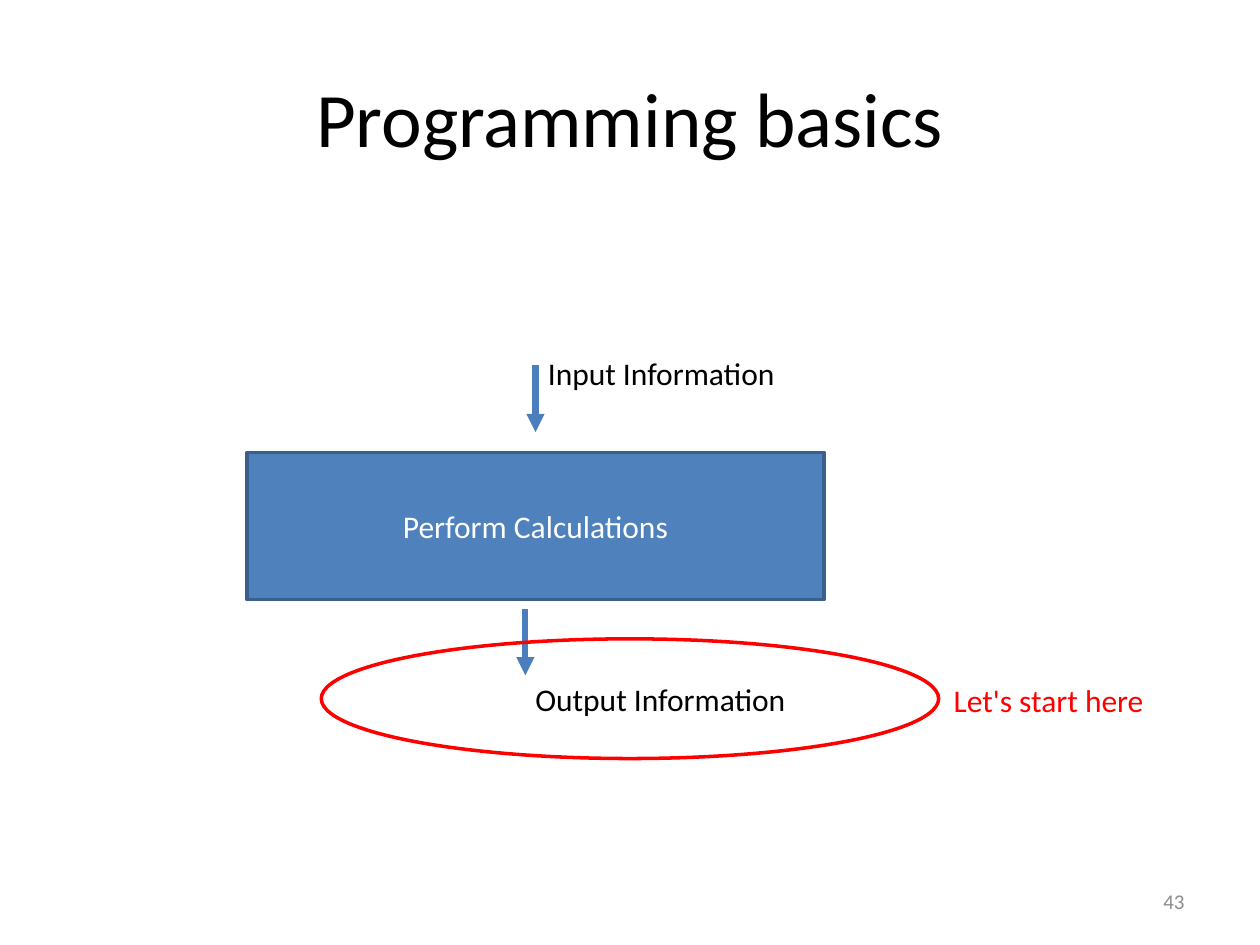
import pptx
import pptx.dml.color
import pptx.enum.shapes
import pptx.enum.text
import pptx.oxml
import pptx.oxml.ns
import pptx.util
from pptx.util import Inches

COLORS = {
    "black": "000000", "white": "FFFFFF", "gray": "8C8C8C", "red": "FF0000",
    "box": "4F81BD", "border": "3A5F8C", "arrow": "4B7EBC",
}
SHAPES = pptx.enum.shapes.MSO_SHAPE
ALIGN = pptx.enum.text.PP_ALIGN
ANCHOR = pptx.enum.text.MSO_ANCHOR


def color(name):
    return pptx.dml.color.RGBColor.from_string(COLORS[name])


def write(shape, text, size=18, ink="black", align=ALIGN.LEFT, anchor=ANCHOR.TOP):
    frame = shape.text_frame
    frame.word_wrap = True
    frame.vertical_anchor = anchor
    paragraph = frame.paragraphs[0]
    paragraph.alignment = align
    run = paragraph.add_run()
    run.text = text
    font_format = {"name": "Calibri", "size": pptx.util.Pt(size)}
    for attribute, value in font_format.items():
        setattr(run.font, attribute, value)
    run.font.color.rgb = color(ink)


def add_label(slide, left, top, width, height, text, **style):
    box = slide.shapes.add_textbox(*map(Inches, (left, top, width, height)))
    write(box, text, **style)


def add_outlined(shapes, kind, left, top, width, height, border):
    shape = shapes.add_shape(kind, *map(Inches, (left, top, width, height)))
    shape.shadow.inherit = False
    shape.line.color.rgb = color(border)
    shape.line.width = pptx.util.Pt(2)
    return shape


def add_down_arrow(slide, left, top, length):
    arrow = slide.shapes.add_connector(
        pptx.enum.shapes.MSO_CONNECTOR.STRAIGHT,
        *map(Inches, (left, top, left, top + length)))
    arrow.line.color.rgb = color("arrow")
    arrow.line.width = pptx.util.Pt(3.5)
    # Arrowhead and no shadow
    tail = pptx.oxml.parse_xml(
        f'<a:tailEnd {pptx.oxml.ns.nsdecls("a")} type="triangle"/>')
    arrow.line._get_or_add_ln().append(tail)
    effects = pptx.oxml.parse_xml(f'<a:effectLst {pptx.oxml.ns.nsdecls("a")}/>')
    arrow._element.spPr.append(effects)


def add_flow(slide, left, top, width, height):
    """Input arrow above the calculation box, output arrow below it."""
    add_down_arrow(slide, left + width / 2, top - 0.69, 0.53)
    add_label(slide, left + width / 2, top - 0.83, 3.58, 0.4, "Input Information")

    box = add_outlined(slide.shapes, SHAPES.RECTANGLE, left, top, width, height, "border")
    box.fill.solid()
    box.fill.fore_color.rgb = color("box")
    write(box, "Perform Calculations", ink="white",
          align=ALIGN.CENTER, anchor=ANCHOR.MIDDLE)

    bottom = top + height
    add_down_arrow(slide, left + 2.21, bottom + 0.07, 0.53)
    add_label(slide, left + 2.19, bottom + 0.59, 3.58, 0.4, "Output Information")


def add_callout(slide, left, top, width, height):
    """Red ring with its remark on the right."""
    group = slide.shapes.add_group_shape()
    ring = add_outlined(group.shapes, SHAPES.OVAL, left, top, width, height, "red")
    ring.fill.background()
    remark = group.shapes.add_textbox(
        *map(Inches, (left + width + 0.02, top + 0.29, 1.94, 0.4)))
    write(remark, "Let's start here", ink="red")


def main():
    presentation = pptx.Presentation()
    presentation.slide_width = Inches(10)
    presentation.slide_height = Inches(7.5)
    slide = presentation.slides.add_slide(presentation.slide_layouts[6])

    # Title and page number
    add_label(slide, 0.5, 0.3, 9, 1.25, "Programming basics", size=44,
              align=ALIGN.CENTER, anchor=ANCHOR.MIDDLE)
    add_label(slide, 7.17, 6.95, 2.33, 0.4, "43", size=12, ink="gray",
              align=ALIGN.RIGHT, anchor=ANCHOR.MIDDLE)

    # Diagram
    add_flow(slide, 1.96, 3.59, 4.58, 1.17)
    add_callout(slide, 2.55, 5.07, 4.9, 0.95)

    presentation.save("out.pptx")


if __name__ == "__main__":
    main()
